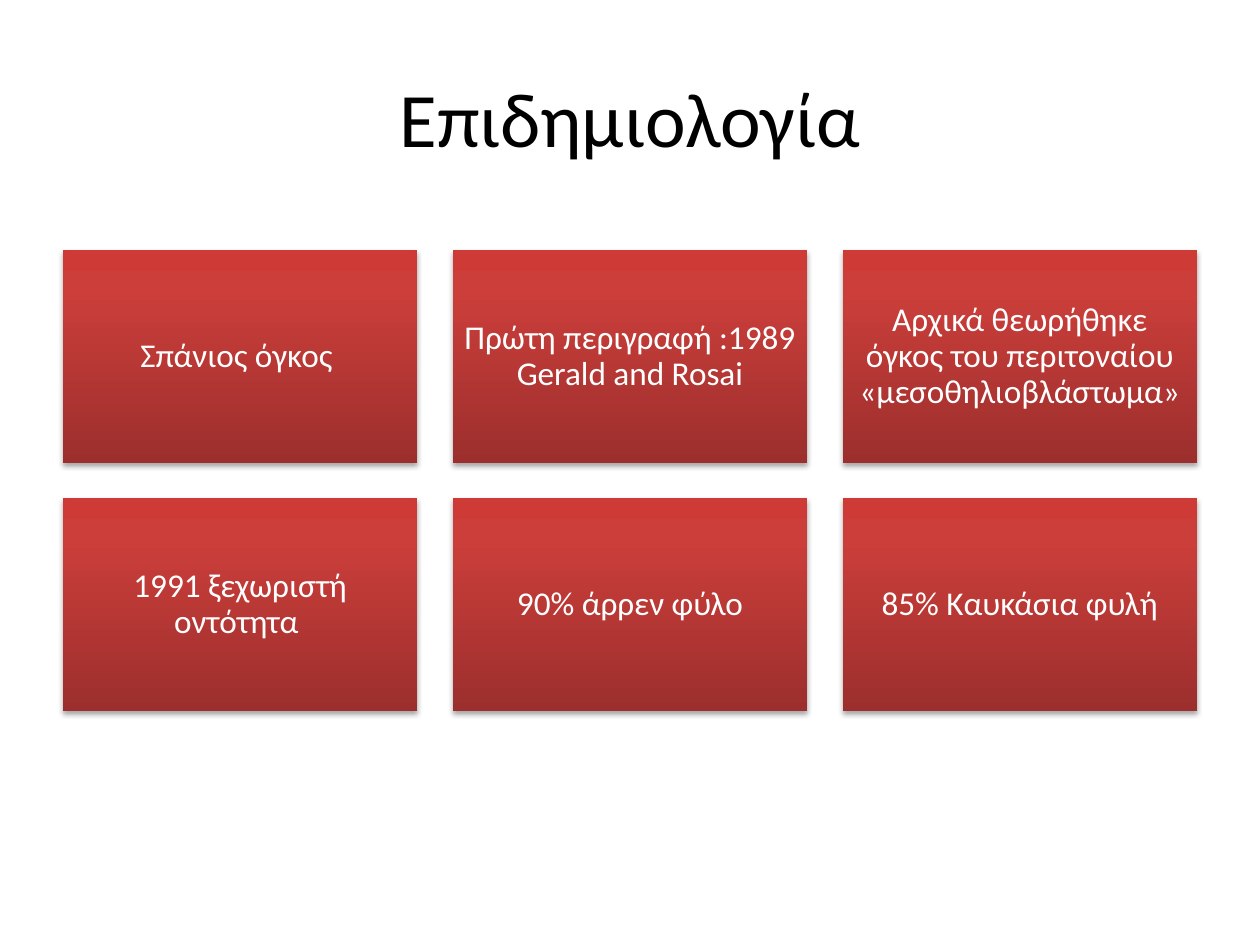
import copy

import lxml.etree
import pptx
import pptx.dml.color
import pptx.enum.shapes
import pptx.enum.text
import pptx.oxml.ns
import pptx.util

Pt = pptx.util.Pt
qn = pptx.oxml.ns.qn

COLOURS = {"title": "000000", "text": "FFFFFF", "shadow": "000000",
           "dark": "9C2F2D", "middle": "CB3E3A", "light": "CE3B37"}
GRADIENT = [(0, "dark"), (0.8, "middle"), (1, "light")]
FACTS = [
    "Σπάνιος όγκος ",
    "Πρώτη περιγραφή :1989 Gerald and Rosai",
    "Αρχικά θεωρήθηκε όγκος του περιτοναίου «μεσοθηλιοβλάστωμα»",
    "1991 ξεχωριστή οντότητα ",
    "90% άρρεν φύλο",
    "85% Καυκάσια φυλή",
]


def rgb(name):
    """Return the named colour."""
    return pptx.dml.color.RGBColor.from_string(COLOURS[name])


def write_text(box, text, *, size, colour, inset, spacing=1.0):
    """Put centred, formatted text into a shape."""
    frame = box.text_frame
    frame.word_wrap = True
    frame.auto_size = pptx.enum.text.MSO_AUTO_SIZE.NONE
    frame.vertical_anchor = pptx.enum.text.MSO_ANCHOR.MIDDLE
    frame.margin_left = frame.margin_right = Pt(inset)
    frame.margin_top = frame.margin_bottom = Pt(inset)
    para = frame.paragraphs[0]
    para.alignment = pptx.enum.text.PP_ALIGN.CENTER
    para.line_spacing = spacing
    span = para.add_run()
    span.text = text
    span.font.name = "Calibri"
    span.font.size = Pt(size)
    span.font.color.rgb = rgb(colour)


def fill_gradient(box):
    """Fill a shape with the red gradient, darkest at the bottom."""
    box.fill.gradient()
    box.fill.gradient_angle = 90
    stop_list = next(box._element.iter(qn("a:gsLst")))
    stop_list.append(copy.deepcopy(stop_list[-1]))
    for stop, (position, colour) in zip(box.fill.gradient_stops, GRADIENT):
        stop.position = position
        stop.color.rgb = rgb(colour)


def add_shadow(box):
    """Give a shape a soft shadow straight below it."""
    box.shadow.inherit = False
    effects = box._element.spPr.find(qn("a:effectLst"))
    shadow = lxml.etree.SubElement(
        effects, qn("a:outerShdw"), blurRad=str(Pt(3.1)), dist=str(Pt(1.8)),
        dir="5400000", rotWithShape="0")
    colour = lxml.etree.SubElement(shadow, qn("a:srgbClr"), val=COLOURS["shadow"])
    lxml.etree.SubElement(colour, qn("a:alpha"), val="35000")


def place_title(page, text, left, top, width, height):
    """Move the title placeholder into the given box and fill it."""
    title = page.shapes.title
    title.left, title.top = Pt(left), Pt(top)
    title.width, title.height = Pt(width), Pt(height)
    write_text(title, text, size=44, colour="title", inset=4)


def place_tiles(page, facts, left, top, width, columns=3):
    """Lay out fact tiles in a grid across the given width."""
    tile_width = width / (columns + 0.1 * (columns - 1))
    tile_height = 0.6 * tile_width
    gap = 0.1 * tile_width
    group = page.shapes.add_group_shape()
    for index, fact in enumerate(facts):
        row, column = divmod(index, columns)
        tile = group.shapes.add_shape(
            pptx.enum.shapes.MSO_SHAPE.RECTANGLE,
            Pt(left + column * (tile_width + gap)),
            Pt(top + row * (tile_height + gap)),
            Pt(tile_width), Pt(tile_height))
        fill_gradient(tile)
        tile.line.fill.background()
        add_shadow(tile)
        write_text(tile, fact, size=19, colour="text", inset=5.7, spacing=0.9)


def main():
    """Build and save the deck."""
    deck = pptx.Presentation()
    deck.slide_width, deck.slide_height = Pt(720), Pt(540)
    page = deck.slides.add_slide(deck.slide_layouts[5])
    place_title(page, "Επιδημιολογία", 36, 21.6, 648, 90)
    place_tiles(page, FACTS, 36, 142.9, 648)
    deck.save("out.pptx")


if __name__ == "__main__":
    main()
